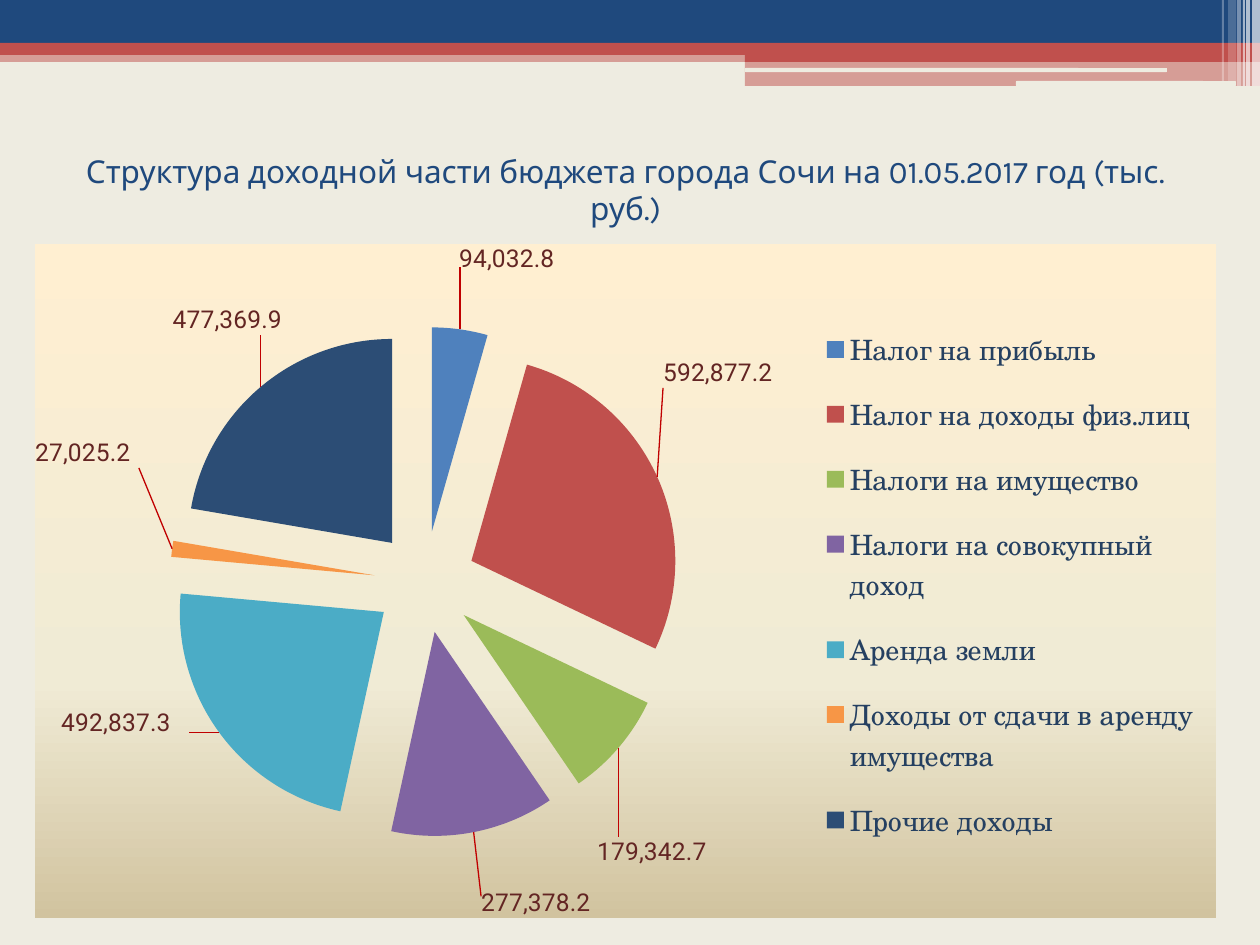
from lxml import etree
from pptx import Presentation
from pptx.chart.data import CategoryChartData
from pptx.dml.color import RGBColor
from pptx.enum.chart import XL_CHART_TYPE as CT, XL_LABEL_POSITION as LP, XL_LEGEND_POSITION as LEG
from pptx.enum.shapes import MSO_SHAPE as SH
from pptx.enum.text import MSO_ANCHOR, PP_ALIGN
from pptx.oxml import parse_xml
from pptx.oxml.ns import nsdecls, qn
from pptx.util import Pt

PX = 914400 / 126  # EMU per px

CREAM = RGBColor(0xEE, 0xEC, 0xE1)
NAVY = RGBColor(0x1F, 0x49, 0x7D)
RED = RGBColor(0xC0, 0x50, 0x4D)
WHITE = RGBColor(0xFF, 0xFF, 0xFF)
BLACK = RGBColor(0, 0, 0)
LEGEND_INK = RGBColor(0x25, 0x40, 0x61)
LABEL_INK = RGBColor(0x63, 0x25, 0x23)
LEADER = RGBColor(0xC0, 0, 0)
GRADIENT = [(0, "FFEFD1"), (65, "F0EBD5"), (100, "D1C39F")]

# left, top, width, height, colour, opacity in percent
BANDS = [
    (0, 50, 1260, 12, RED, 50),
    (0, 0, 1260, 43, NAVY, 100),
    (0, 43, 1260, 12, RED, 100),
    (745, 49, 515, 13, RED, 100),
    (745, 61, 515, 25, RED, 50),
]
SLITS = [(745, 68, 422, 4), (1016, 81, 220, 5)]
# left, width, height, opacity in percent
STRIPES = [(1252, 8, 86, 65), (1246, 4, 86, 65), (1243, 2, 86, 60),
           (1237, 4, 86, 40), (1228, 8, 81, 20), (1222, 2, 81, 30)]

CHART = (35, 244, 1181, 674)
PLOT = (170, 327, 510, 510)
LEGEND = (815, 305, 390, 560)
NUMBER_FORMAT = "#,##0.0_р_."
# category, value, colour, label shift in px
SLICES = [
    ("Налог на прибыль", 94032.8, RGBColor(0x4F, 0x81, 0xBD), (-2, -55)),
    ("Налог на доходы физ.лиц", 592877.2, RED, (-1, -86)),
    ("Налоги на имущество", 179342.7, RGBColor(0x9B, 0xBB, 0x59), (-27, 84)),
    ("Налоги на совокупный доход", 277378.2, RGBColor(0x80, 0x64, 0xA2), (6, 57)),
    ("Аренда земли", 492837.3, RGBColor(0x4B, 0xAC, 0xC6), (-24, -29)),
    ("Доходы от сдачи в аренду имущества", 27025.2, RGBColor(0xF7, 0x96, 0x46), (-26, -80)),
    ("Прочие доходы", 477369.9, RGBColor(0x2C, 0x4D, 0x75), (45, -46)),
]


def emu(*lengths):
    return [round(n * PX) for n in lengths]


def set_font(font, name, size, color):
    font.name, font.size = name, Pt(size)
    font.color.rgb = color


def add_block(s, box, color, opacity=100, kind=SH.RECTANGLE):
    sp = s.shapes.add_shape(kind, *emu(*box))
    sp.shadow.inherit = False
    sp.fill.solid()
    sp.fill.fore_color.rgb = color
    sp.line.fill.background()
    if opacity < 100:
        clr = sp.fill._xPr.find(".//" + qn("a:srgbClr"))
        etree.SubElement(clr, qn("a:alpha"), val=str(opacity * 1000))


def add_header(s):
    for *box, color, opacity in BANDS:
        add_block(s, box, color, opacity)
    for box in SLITS:
        add_block(s, box, CREAM, kind=SH.ROUNDED_RECTANGLE)
    for left, width, height, opacity in STRIPES:
        add_block(s, (left, 0, width, height), WHITE, opacity)


def set_title(s, text):
    title = s.shapes.title
    title.left, title.top, title.width, title.height = emu(35, 116, 1181, 147)
    tf = title.text_frame
    tf.text = text
    tf.word_wrap = True
    tf.vertical_anchor = MSO_ANCHOR.MIDDLE
    p = tf.paragraphs[0]
    p.alignment = PP_ALIGN.CENTER
    set_font(p.runs[0].font, "Karla", 18, NAVY)


def layout_xml(values, inner=False, edge=True):
    """Manual layout from fractions of the chart."""
    parts = '<c:layoutTarget val="inner"/>' if inner else ""
    if edge:
        parts += '<c:xMode val="edge"/><c:yMode val="edge"/>'
    parts += "".join(f'<c:{k} val="{v:.4f}"/>' for k, v in zip("xywh", values))
    return parse_xml(f'<c:layout {nsdecls("c")}><c:manualLayout>{parts}'
                     '</c:manualLayout></c:layout>')


def chart_fractions(box):
    left, top, width, height = CHART
    x, y, w, h = box
    return (x - left) / width, (y - top) / height, w / width, h / height


def replace_layout(parent, layout, index):
    old = parent.find(qn("c:layout"))
    if old is not None:
        parent.remove(old)
    parent.insert(index, layout)


def fill_chart_area(chart):
    stops = "".join(f'<a:gs pos="{pos * 1000}"><a:srgbClr val="{c}"/></a:gs>'
                    for pos, c in GRADIENT)
    sp_pr = parse_xml(
        f'<c:spPr {nsdecls("c", "a")}><a:gradFill><a:gsLst>{stops}</a:gsLst>'
        '<a:lin ang="5400000" scaled="0"/></a:gradFill>'
        '<a:ln><a:noFill/></a:ln></c:spPr>')
    chart._chartSpace.find(qn("c:chart")).addnext(sp_pr)


def style_slice(point, color, shift):
    point.format.fill.solid()
    point.format.fill.fore_color.rgb = color
    label = point.data_label
    set_font(label.font, "Roboto", 14, LABEL_INK)
    label.position = LP.OUTSIDE_END
    d_lbl = label._dLbl
    offset = (shift[0] / CHART[2], shift[1] / CHART[3])
    replace_layout(d_lbl, layout_xml(offset, edge=False), 1)
    d_lbl.insert(2, parse_xml(f'<c:numFmt {nsdecls("c")} sourceLinked="0" '
                              f'formatCode="{NUMBER_FORMAT}"/>'))


def add_pie(s):
    data = CategoryChartData(number_format="#,##0.0")
    data.categories = [row[0] for row in SLICES]
    data.add_series("Series 1", [row[1] for row in SLICES])
    chart = s.shapes.add_chart(CT.PIE, *emu(*CHART), data).chart
    set_font(chart.font, "TeX Gyre Schola", 18, BLACK)
    chart.has_title = False
    fill_chart_area(chart)

    # Exploded slices and their labels
    plot = chart.plots[0]
    plot.vary_by_categories = True
    series = plot.series[0]
    series._element.find(qn("c:tx")).addnext(
        parse_xml(f'<c:explosion {nsdecls("c")} val="25"/>'))
    labels = series.data_labels
    labels.show_value = True
    labels.number_format, labels.number_format_is_linked = NUMBER_FORMAT, False
    set_font(labels.font, "Roboto", 14, LABEL_INK)
    labels.position = LP.OUTSIDE_END
    for i, (_, _, color, shift) in enumerate(SLICES):
        style_slice(series.points[i], color, shift)

    # Leader lines
    d_lbls = labels._element
    lead = d_lbls.find(qn("c:showLeaderLines"))
    if lead is None:
        lead = etree.SubElement(d_lbls, qn("c:showLeaderLines"))
    lead.set("val", "1")
    lead.addnext(parse_xml(
        f'<c:leaderLines {nsdecls("c", "a")}><c:spPr><a:ln w="9525"><a:solidFill>'
        f'<a:srgbClr val="{LEADER}"/></a:solidFill></a:ln></c:spPr></c:leaderLines>'))

    # Legend and plot placement
    chart.has_legend = True
    legend = chart.legend
    legend.position, legend.include_in_layout = LEG.RIGHT, False
    set_font(legend.font, "TeX Gyre Schola", 16, LEGEND_INK)
    replace_layout(legend._element, layout_xml(chart_fractions(LEGEND)), 1)
    plot_area = chart._chartSpace.find(".//" + qn("c:plotArea"))
    replace_layout(plot_area, layout_xml(chart_fractions(PLOT), inner=True), 0)


def main():
    prs = Presentation()
    prs.slide_width, prs.slide_height = emu(1260, 945)
    s = prs.slides.add_slide(prs.slide_layouts[5])
    s.background.fill.solid()
    s.background.fill.fore_color.rgb = CREAM
    add_header(s)
    set_title(s, "Структура доходной части бюджета города Сочи на 01.05.2017 год (тыс. руб.)")
    add_pie(s)
    prs.save("out.pptx")


if __name__ == "__main__":
    main()
